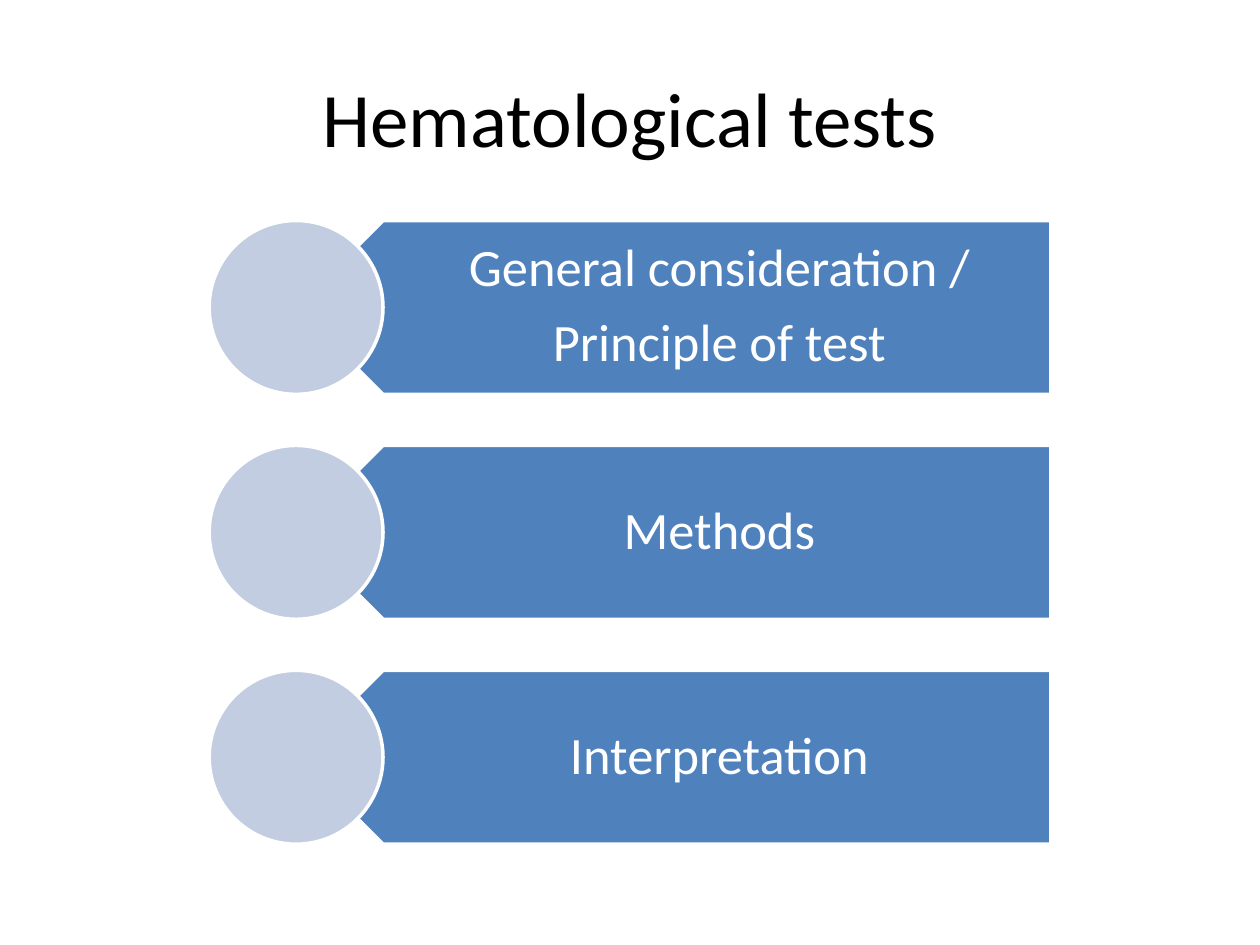
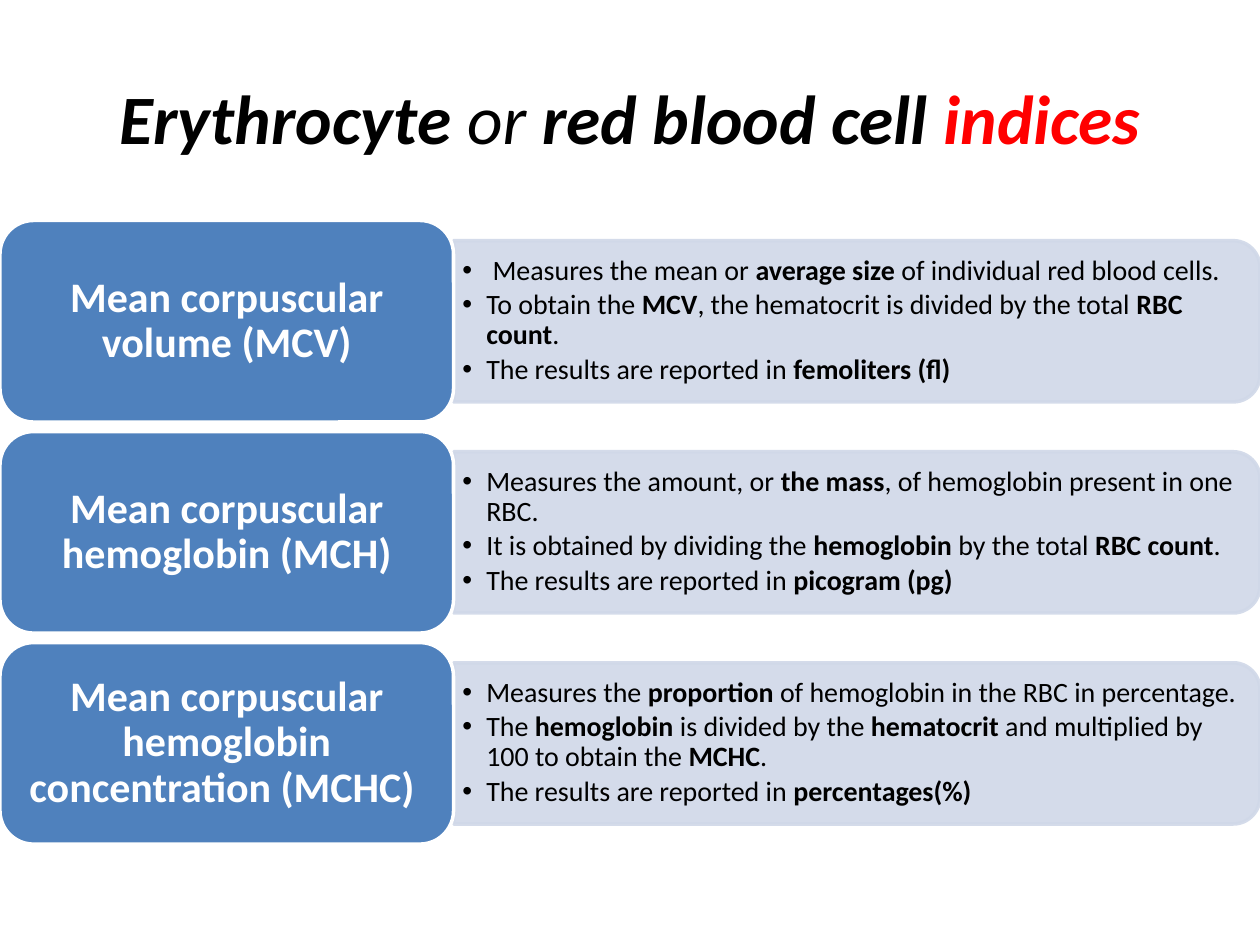
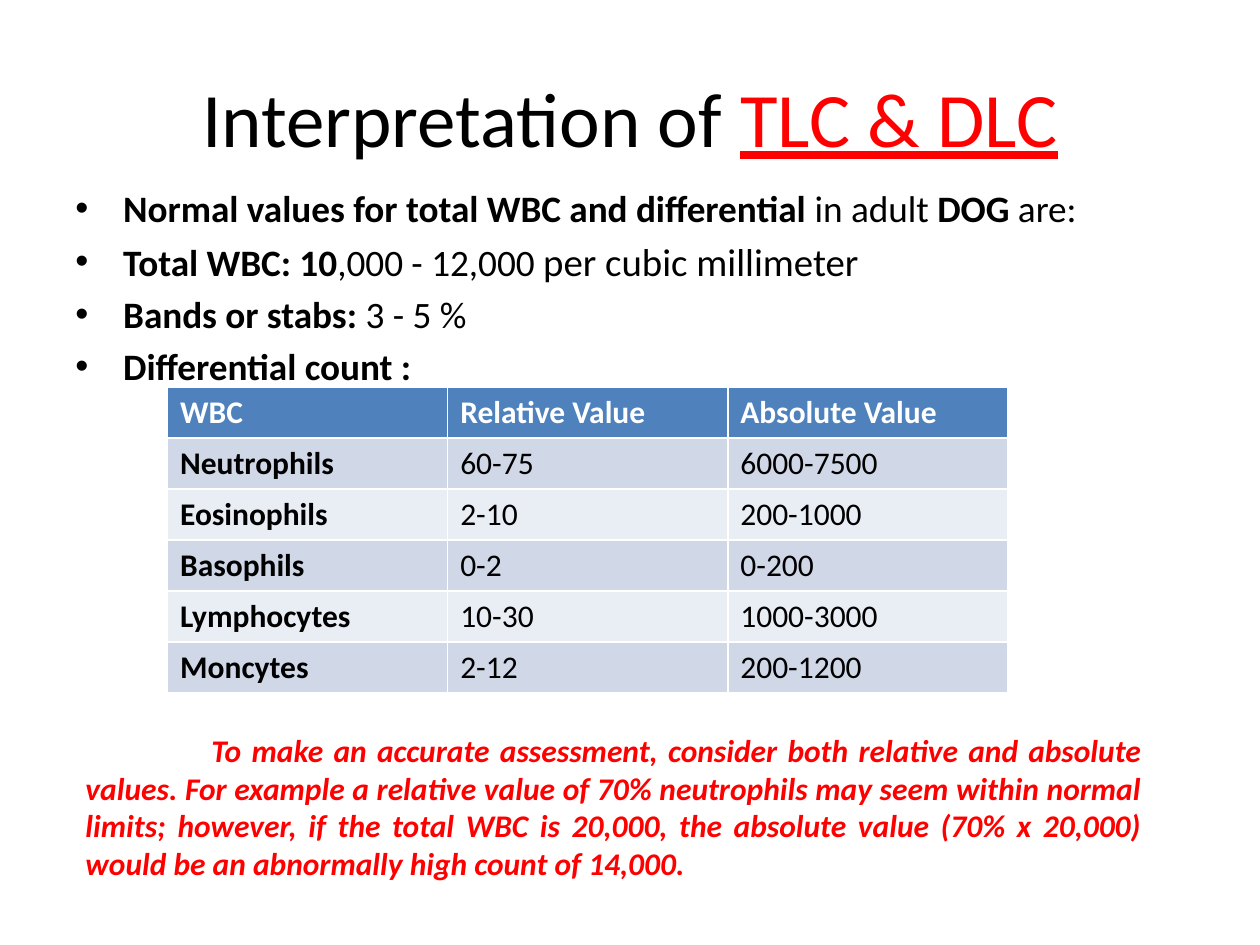
from dataclasses import dataclass, field
from typing import Any, NamedTuple

from lxml import etree
from pptx import Presentation
from pptx.dml.color import RGBColor
from pptx.enum.shapes import MSO_SHAPE
from pptx.enum.text import MSO_ANCHOR, PP_ALIGN
from pptx.oxml.ns import qn
from pptx.util import Inches, Pt

CENTER, JUSTIFY, LEFT = PP_ALIGN.CENTER, PP_ALIGN.JUSTIFY, PP_ALIGN.LEFT
TOP, MIDDLE = MSO_ANCHOR.TOP, MSO_ANCHOR.MIDDLE
ELLIPSE, HOME_PLATE = MSO_SHAPE.OVAL, MSO_SHAPE.PENTAGON
ROUNDED, TOP_ROUNDED = MSO_SHAPE.ROUNDED_RECTANGLE, MSO_SHAPE.ROUND_2_SAME_RECTANGLE

FONT = "Calibri"
BLACK, WHITE, RED = "000000", "FFFFFF", "FF0000"
BLUE, DISC, PALE, PALER = "4F81BD", "C2CDE1", "D0D8E8", "E9EDF4"
ROWS_TOP, ROWS_BOTTOM, ROW_COUNT = 1.75, 6.7, 3


class Box(NamedTuple):
    left: float
    top: float
    width: float
    height: float


class Run(NamedTuple):
    text: str
    format: dict[str, Any] = {}


@dataclass
class TextStyle:
    size: float
    color: str = BLACK
    align: Any = LEFT
    anchor: Any = TOP
    insets: tuple[float, float, float, float] = (0.1, 0.05, 0.1, 0.05)
    bullet_indent: float = 0
    first_indent: float = 0
    paragraph_format: dict[str, Any] = field(default_factory=dict)
    space_before: float = 0


TITLE = TextStyle(44, align=CENTER, anchor=MIDDLE)
BANNER = TextStyle(30, WHITE, CENTER, MIDDLE, (0.61, 0.12, 0.23, 0.12),
                   paragraph_format={"line_spacing": 0.9, "space_after": Pt(10.5)})
INDEX_NAME = TextStyle(24, WHITE, CENTER, MIDDLE, paragraph_format={"line_spacing": 0.9})
INDEX_FACTS = TextStyle(16, anchor=MIDDLE, insets=(0.07, 0.03, 0.07, 0.03), bullet_indent=0.19,
                        paragraph_format={"line_spacing": 0.9, "space_after": Pt(2.4)})
BODY = TextStyle(21.3, bullet_indent=0.38, space_before=4.2)
ADVICE = TextStyle(18, RED, JUSTIFY, first_indent=1)
TABLE_HEAD, TABLE_BODY = TextStyle(18, WHITE), TextStyle(18)

BANNERS = [["General consideration /", "Principle of test"], ["Methods"], ["Interpretation"]]

INDICES = {
    "**Mean corpuscular volume (MCV)**": [
        " Measures the mean or **average size** of individual red blood cells.",
        "To obtain the **MCV**, the hematocrit is divided by the total **RBC count**.",
        "The results are reported in **femoliters (fl)**",
    ],
    "**Mean corpuscular hemoglobin (MCH)**": [
        "Measures the amount, or **the mass**, of hemoglobin present in one RBC.",
        "It is obtained by dividing the **hemoglobin** by the total **RBC count**.",
        "The results are reported in **picogram (pg)**",
    ],
    "**Mean corpuscular hemoglobin concentration (MCHC) **": [
        "Measures the **proportion** of hemoglobin in the RBC in percentage.",
        "The **hemoglobin** is divided by the **hematocrit** and multiplied by 100 to obtain the **MCHC**.",
        "The results are reported in **percentages(%)**",
    ],
}

NORMAL_VALUES = [
    "**Normal values for total WBC and differential** in adult **DOG** are:",
    [Run("Total WBC: 10", {"bold": True}), Run(",000 - 12,000 "),
     Run("per cubic millimeter", {"size": Pt(22.2)})],
    "**Bands or stabs:** 3 - 5 %",
    "**Differential count :**",
]

DIFFERENTIAL = [
    ("WBC", "Relative Value", "Absolute Value"),
    ("Neutrophils", "60-75", "6000-7500"),
    ("Eosinophils", "2-10", "200-1000"),
    ("Basophils", "0-2", "0-200"),
    ("Lymphocytes", "10-30", "1000-3000"),
    ("Moncytes", "2-12", "200-1200"),
]

ADVICE_TEXT = (
    "To make an accurate assessment, consider both relative and absolute values. "
    "For example a relative value of 70% neutrophils may seem within normal limits; "
    "however, if the total WBC is 20,000, the absolute value (70% x 20,000) "
    "would be an abnormally high count of 14,000."
)

Content = str | list[Run]


def rgb(color: str) -> RGBColor:
    return RGBColor.from_string(color)


def emu(box: Box) -> list[int]:
    return [Inches(length) for length in box]


def set_all(target: Any, values: dict[str, Any]) -> None:
    for name, value in values.items():
        setattr(target, name, value)


def row_tops(height: float) -> list[float]:
    """Tops of equally spaced rows that fill the area under the title."""
    pitch = (ROWS_BOTTOM - ROWS_TOP - height) / (ROW_COUNT - 1)
    return [ROWS_TOP + index * pitch for index in range(ROW_COUNT)]


def to_runs(content: Content) -> list[Run]:
    """Split a string into runs; double asterisks enclose bold text."""
    if not isinstance(content, str):
        return content
    return [Run(part, {"bold": index % 2 == 1})
            for index, part in enumerate(content.split("**")) if part]


def set_indents(paragraph: Any, style: TextStyle) -> None:
    properties = paragraph._p.get_or_add_pPr()
    if style.bullet_indent:
        properties.set("marL", str(Inches(style.bullet_indent)))
        properties.set("indent", str(-Inches(style.bullet_indent)))
        etree.SubElement(properties, qn("a:buFont"), typeface="Arial")
        etree.SubElement(properties, qn("a:buChar"), char="•")
    elif style.first_indent:
        properties.set("indent", str(Inches(style.first_indent)))


def write(frame: Any, contents: list[Content], style: TextStyle) -> None:
    for index, content in enumerate(contents):
        paragraph = frame.paragraphs[0] if index == 0 else frame.add_paragraph()
        set_indents(paragraph, style)
        set_all(paragraph, {"alignment": style.align, **style.paragraph_format})
        if index and style.space_before:
            paragraph.space_before = Pt(style.space_before)
        for text, format_values in to_runs(content):
            run = paragraph.add_run()
            run.text = text
            values = {"name": FONT, "size": Pt(style.size), "color": style.color, **format_values}
            run.font.color.rgb = rgb(values.pop("color"))
            set_all(run.font, values)


def add_text(slide: Any, box: Box, contents: list[Content], style: TextStyle) -> None:
    frame = slide.shapes.add_textbox(*emu(box)).text_frame
    left, top, right, bottom = (Inches(inset) for inset in style.insets)
    set_all(frame, {"word_wrap": True, "vertical_anchor": style.anchor, "margin_left": left,
                    "margin_top": top, "margin_right": right, "margin_bottom": bottom})
    write(frame, contents, style)


def add_block(slide: Any, kind: Any, box: Box, fill: str, line: str = WHITE,
              rotation: float = 0, opacity: int = 100) -> None:
    shape = slide.shapes.add_shape(kind, *emu(box))
    shape.rotation = rotation
    shape.shadow.inherit = False
    shape.fill.solid()
    shape.fill.fore_color.rgb = rgb(fill)
    shape.line.color.rgb = rgb(line)
    shape.line.width = Pt(2)
    if opacity < 100:
        for color in shape._element.spPr.iter(qn("a:srgbClr")):
            etree.SubElement(color, qn("a:alpha"), val=str(opacity * 1000))


def add_titled_slide(presentation: Any, title: Content) -> Any:
    slide = presentation.slides.add_slide(presentation.slide_layouts[6])
    add_text(slide, Box(0.5, 0.3, 9, 1.25), [title], TITLE)
    return slide


def build_topics(presentation: Any) -> None:
    slide = add_titled_slide(presentation, "Hematological tests")
    height = 1.38
    for top, lines in zip(row_tops(height), BANNERS):
        add_block(slide, HOME_PLATE, Box(2.35, top, 5.99, height), BLUE, rotation=180)
        add_text(slide, Box(2.7, top, 5.64, height), lines, BANNER)
        add_block(slide, ELLIPSE, Box(1.66, top, height, height), DISC)


def build_indices(presentation: Any) -> None:
    base = {"size": Pt(39.6), "italic": True}
    strong = {**base, "bold": True}
    slide = add_titled_slide(presentation, [
        Run("Erythrocyte", strong), Run(" or ", base), Run("red blood cell ", strong),
        Run("indices", {**strong, "color": RED})])
    height, name_width, panel_height, panel_width, margin = 1.6, 3.6, 1.28, 6.4, 0.08
    for top, (name, facts) in zip(row_tops(height), INDICES.items()):
        middle = top + height / 2
        upright = Box(name_width + (panel_width - panel_height) / 2, middle - panel_width / 2,
                      panel_height, panel_width)
        add_block(slide, TOP_ROUNDED, upright, PALE, PALE, rotation=90, opacity=90)
        add_text(slide, Box(name_width, middle - 0.58, 6.34, 1.15), facts, INDEX_FACTS)
        add_block(slide, ROUNDED, Box(0, top, name_width, height), BLUE)
        add_text(slide, Box(margin, top + margin, name_width - 2 * margin, height - 2 * margin),
                 [name], INDEX_NAME)


def add_differential_table(slide: Any, box: Box) -> None:
    table = slide.shapes.add_table(len(DIFFERENTIAL), len(DIFFERENTIAL[0]), *emu(box)).table
    for row_index, values in enumerate(DIFFERENTIAL):
        is_head = row_index == 0
        fill = BLUE if is_head else (PALER, PALE)[row_index % 2]
        for column_index, value in enumerate(values):
            cell = table.cell(row_index, column_index)
            cell.fill.solid()
            cell.fill.fore_color.rgb = rgb(fill)
            is_bold = is_head or column_index == 0
            write(cell.text_frame, [[Run(value, {"bold": is_bold})]],
                  TABLE_HEAD if is_head else TABLE_BODY)


def build_interpretation(presentation: Any) -> None:
    slide = add_titled_slide(presentation, [
        Run("Interpretation of "), Run("TLC & DLC", {"color": RED, "underline": True})])
    add_text(slide, Box(0.5, 1.42, 9, 1.58), NORMAL_VALUES, BODY)
    add_differential_table(slide, Box(1.33, 3.07, 6.67, 2.43))
    add_text(slide, Box(0.58, 5.75, 8.58, 1.31),
             [[Run(ADVICE_TEXT, {"bold": True, "italic": True})]], ADVICE)


def main() -> None:
    presentation = Presentation()
    presentation.slide_width, presentation.slide_height = Inches(10), Inches(7.5)
    build_topics(presentation)
    build_indices(presentation)
    build_interpretation(presentation)
    presentation.save("out.pptx")


if __name__ == "__main__":
    main()
